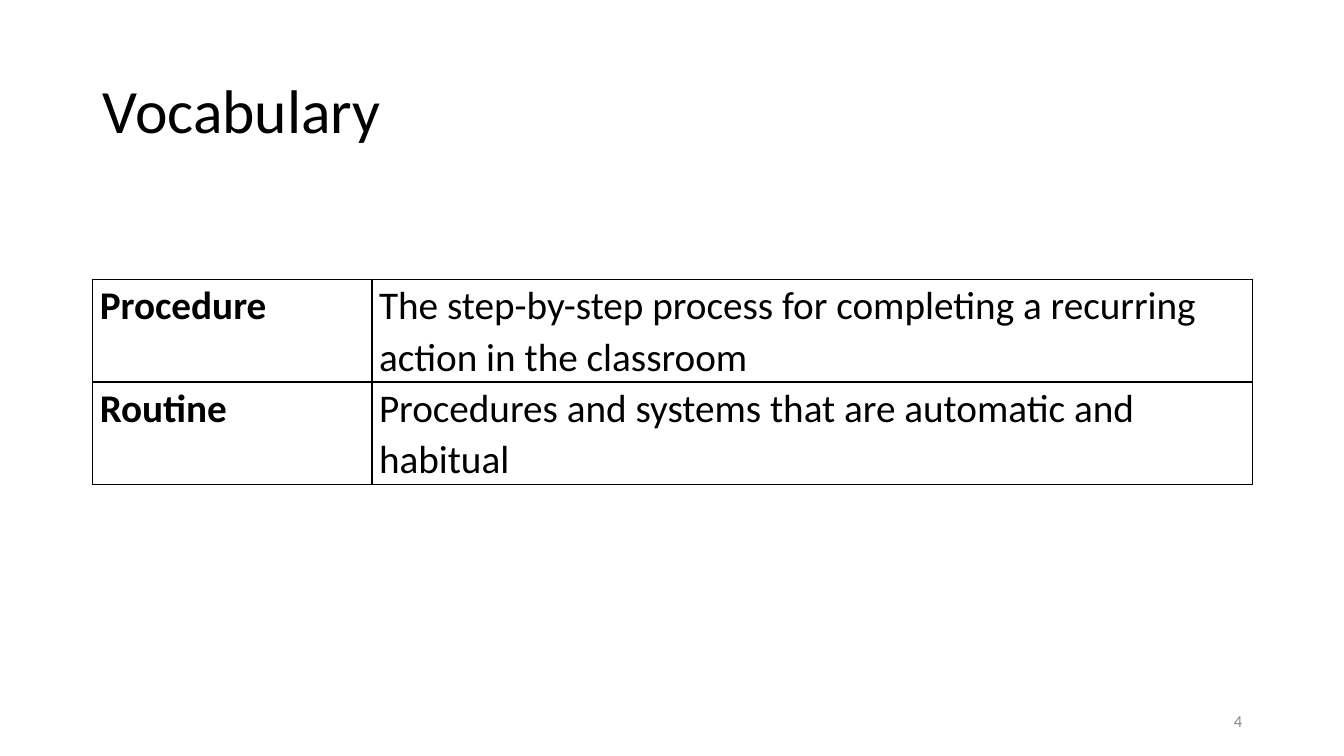
from dataclasses import dataclass
from typing import Any

from lxml import etree
from pptx import Presentation
from pptx import util as u
from pptx.dml.color import RGBColor
from pptx.enum import text
from pptx.oxml import ns

FONT = "Calibri"
BLACK = "000000"
GRAY = "8C8C8C"
COLUMN_WIDTHS = (2.77, 8.73)
ROW_HEIGHT = 1.02
CELL_FORMAT = {
    "margin_left": u.Inches(0.07),
    "margin_right": u.Inches(0.07),
    "margin_top": 0,
    "margin_bottom": 0,
    "vertical_anchor": text.MSO_ANCHOR.TOP,
}


@dataclass
class Label:
    words: str
    box: tuple[float, float, float, float]
    size: float
    color: str
    paragraph_format: dict[str, Any]


@dataclass
class Entry:
    term: str
    definition: str


LABELS = (
    Label("Vocabulary", (0.92, 0.4, 11.5, 1.45), 44, BLACK, {"line_spacing": 0.9}),
    Label("4", (9.42, 6.95, 3, 0.4), 12, GRAY, {"alignment": text.PP_ALIGN.RIGHT}),
)
ENTRIES = (
    Entry(
        "Procedure",
        "The step-by-step process for completing a recurring action in the classroom",
    ),
    Entry("Routine", "Procedures and systems that are automatic and habitual"),
)


def rgb(color: str) -> RGBColor:
    return RGBColor.from_string(color)


def apply(target: Any, values: dict[str, Any]) -> None:
    for name, value in values.items():
        setattr(target, name, value)


def write(frame: Any, words: str, size: float, color: str, bold: bool, layout: dict[str, Any]) -> None:
    paragraph = frame.paragraphs[0]
    apply(paragraph, layout)
    run = paragraph.add_run()
    run.text = words
    apply(run.font, {"name": FONT, "size": u.Pt(size), "bold": bold})
    run.font.color.rgb = rgb(color)


def add_label(slide: Any, label: Label) -> None:
    frame = slide.shapes.add_textbox(*map(u.Inches, label.box)).text_frame
    apply(frame, {"word_wrap": True, "vertical_anchor": text.MSO_ANCHOR.MIDDLE})
    write(frame, label.words, label.size, label.color, False, label.paragraph_format)


def add_borders(cell: Any, color: str, width: float) -> None:
    properties = cell._tc.get_or_add_tcPr()
    for side in ("lnL", "lnR", "lnT", "lnB"):
        line = etree.SubElement(properties, ns.qn(f"a:{side}"), w=str(u.Pt(width)))
        fill = etree.SubElement(line, ns.qn("a:solidFill"))
        etree.SubElement(fill, ns.qn("a:srgbClr"), val=color)


def add_vocabulary(slide: Any, entries: tuple[Entry, ...]) -> None:
    box = (0.92, 2.77, sum(COLUMN_WIDTHS), ROW_HEIGHT * len(entries))
    table = slide.shapes.add_table(
        len(entries), len(COLUMN_WIDTHS), *map(u.Inches, box)
    ).table
    apply(table, {"first_row": False, "horz_banding": False})
    for column, width in zip(table.columns, COLUMN_WIDTHS):
        column.width = u.Inches(width)
    for row, entry in zip(table.rows, entries):
        row.height = u.Inches(ROW_HEIGHT)
        for cell, words in zip(row.cells, (entry.term, entry.definition)):
            apply(cell, CELL_FORMAT)
            add_borders(cell, BLACK, 1)
            cell.fill.background()
            layout = {"line_spacing": 1.07, "space_after": u.Pt(6)}
            write(cell.text_frame, words, 28, BLACK, words == entry.term, layout)


def main() -> None:
    presentation = Presentation()
    apply(presentation, {"slide_width": u.Inches(13.33), "slide_height": u.Inches(7.5)})
    slide = presentation.slides.add_slide(presentation.slide_layouts[6])
    for label in LABELS:
        add_label(slide, label)
    add_vocabulary(slide, ENTRIES)
    presentation.save("out.pptx")


if __name__ == "__main__":
    main()
